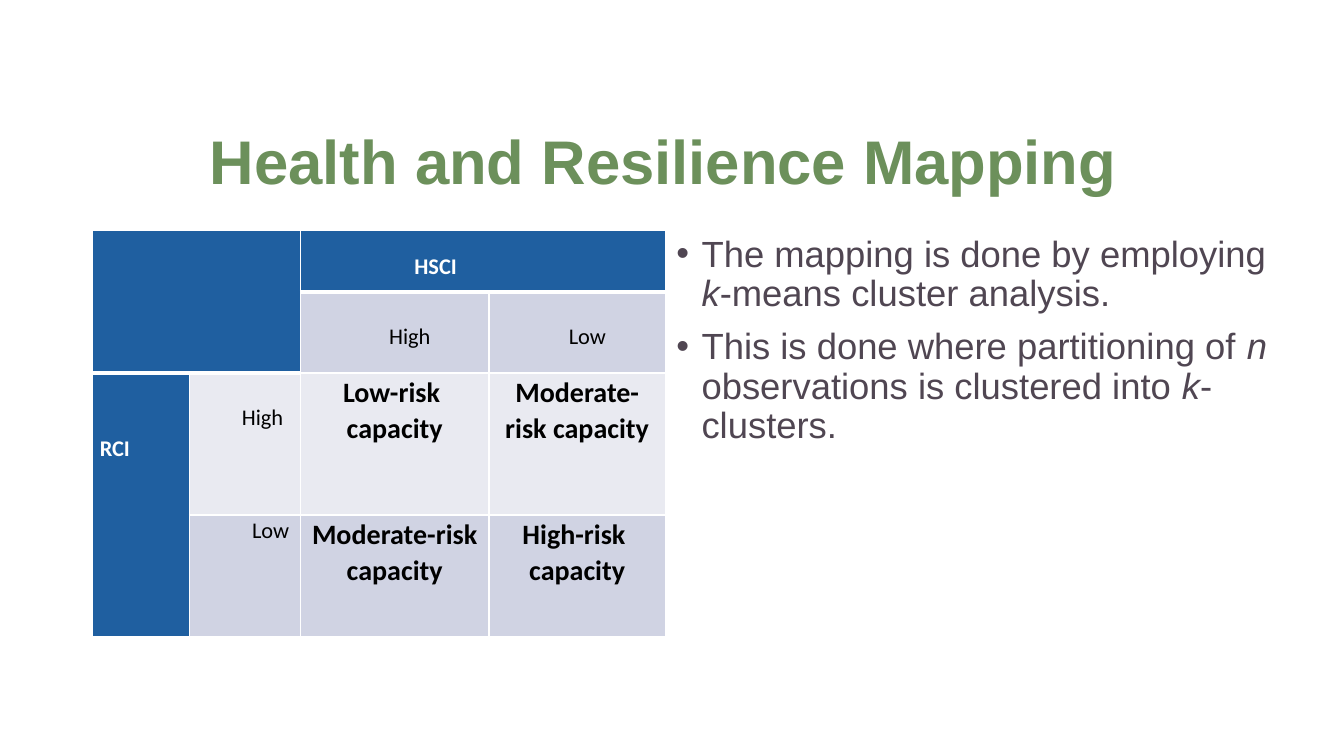
from lxml import etree
from pptx import Presentation
from pptx.dml.color import RGBColor
from pptx.enum.text import MSO_ANCHOR, PP_ALIGN as Align
from pptx.oxml.ns import qn
from pptx.util import Inches, Pt

GREEN = RGBColor(0x6C, 0x90, 0x5B)
PLUM = RGBColor(0x50, 0x46, 0x52)
BLUE = RGBColor(0x1F, 0x5F, 0xA0)
LAVENDER = RGBColor(0xD0, 0xD3, 0xE3)
PALE = RGBColor(0xE9, 0xEA, 0xF1)
WHITE = RGBColor(0xFF, 0xFF, 0xFF)
BLACK = RGBColor(0, 0, 0)

COLUMN_WIDTHS = (0.96, 1.1, 1.87, 1.75)
ROW_HEIGHTS = (0.61, 0.8, 1.41, 1.21)
FILLS = (
    (BLUE, BLUE, BLUE, BLUE),
    (BLUE, BLUE, LAVENDER, LAVENDER),
    (BLUE, PALE, PALE, PALE),
    (BLUE, LAVENDER, LAVENDER, LAVENDER),
)
MERGES = (((0, 0), (1, 1)), ((0, 2), (0, 3)), ((2, 0), (3, 0)))
THICK_EDGES = {(0, 2), (0, 3), (1, 0), (1, 1)}
LABELS = (
    (0, 2, "HSCI", WHITE, True, Align.LEFT, 1.13, 0.2),
    (1, 2, "High", BLACK, False, Align.CENTER, 0.37, 0.29),
    (1, 3, "Low", BLACK, False, Align.CENTER, 0.27, 0.29),
    (2, 0, "RCI", WHITE, True, Align.LEFT, 0.07, 0.6),
    (2, 1, "High", BLACK, False, Align.LEFT, 0.52, 0.29),
    (3, 1, "Low", BLACK, False, Align.LEFT, 0.62, 0),
)
CAPACITIES = (
    (2, 2, ["Low-risk ", "capacity"]),
    (2, 3, ["Moderate-risk capacity"]),
    (3, 2, ["Moderate-risk", "capacity"]),
    (3, 3, ["High-risk ", "capacity"]),
)
POINTS = (
    (("The mapping is done by employing ", False), ("k", True),
     ("-means cluster analysis.", False)),
    (("This is done where partitioning of ", False), ("n", True),
     (" observations is clustered into ", False), ("k", True),
     ("-clusters.", False)),
)


def write(frame, paragraphs, *, font, size, color, bold=False,
          align=Align.LEFT, spacing=1.0, before=0, bullet=False):
    frame.word_wrap = True
    for index, runs in enumerate(paragraphs):
        paragraph = frame.add_paragraph() if index else frame.paragraphs[0]
        paragraph.alignment = align
        paragraph.line_spacing = spacing
        paragraph.space_before = Pt(before if index else 0)
        if bullet:
            properties = paragraph._p.get_or_add_pPr()
            properties.set("marL", str(Inches(0.25)))
            properties.set("indent", str(Inches(-0.25)))
            etree.SubElement(properties, qn("a:buFont"), typeface="Arial")
            etree.SubElement(properties, qn("a:buChar"), char="•")
        for words, italic in [(runs, False)] if isinstance(runs, str) else runs:
            run = paragraph.add_run()
            run.text = words
            run.font.name = font
            run.font.size = Pt(size)
            run.font.color.rgb = color
            run.font.bold = bold
            run.font.italic = italic


def set_borders(cell, top, bottom):
    properties = cell._tc.get_or_add_tcPr()
    sides = (("L", 1), ("R", 1), ("T", top), ("B", bottom))
    for position, (side, width) in enumerate(sides):
        line = etree.Element(qn(f"a:ln{side}"), w=str(Pt(width)))
        fill = etree.SubElement(line, qn("a:solidFill"))
        etree.SubElement(fill, qn("a:srgbClr"), val=str(WHITE))
        properties.insert(position, line)


def add_title(slide, left, top, width, height):
    title = slide.shapes.add_textbox(*map(Inches, (left, top, width, height)))
    title.text_frame.vertical_anchor = MSO_ANCHOR.MIDDLE
    write(title.text_frame, ["Health and Resilience Mapping "], font="Arial",
          size=44, color=GREEN, bold=True, align=Align.CENTER, spacing=0.9)


def add_points(slide, left, top, width, height):
    points = slide.shapes.add_textbox(*map(Inches, (left, top, width, height)))
    write(points.text_frame, POINTS, font="Arial", size=26, color=PLUM,
          spacing=0.9, before=10, bullet=True)


def add_risk_matrix(slide, left, top):
    box = (left, top, sum(COLUMN_WIDTHS), sum(ROW_HEIGHTS))
    matrix = slide.shapes.add_table(4, 4, *map(Inches, box)).table
    matrix.first_row = False
    matrix.horz_banding = False
    for column, width in zip(matrix.columns, COLUMN_WIDTHS):
        column.width = Inches(width)
    for row, height in zip(matrix.rows, ROW_HEIGHTS):
        row.height = Inches(height)
    for r, fills in enumerate(FILLS):
        for c, color in enumerate(fills):
            cell = matrix.cell(r, c)
            cell.fill.solid()
            cell.fill.fore_color.rgb = color
            cell.margin_left = cell.margin_right = Inches(0.07)
            cell.margin_top = cell.margin_bottom = 0
            set_borders(cell, 3 if (r - 1, c) in THICK_EDGES else 1,
                        3 if (r, c) in THICK_EDGES else 1)
    for start, end in MERGES:
        matrix.cell(*start).merge(matrix.cell(*end))
    for r, c, label, color, bold, align, inset, drop in LABELS:
        cell = matrix.cell(r, c)
        cell.margin_left = Inches(inset)
        cell.margin_top = Inches(drop)
        write(cell.text_frame, [label], font="Calibri", size=16, color=color,
              bold=bold, align=align, spacing=1.07)
    for r, c, capacity in CAPACITIES:
        write(matrix.cell(r, c).text_frame, capacity, font="Calibri", size=20,
              color=BLACK, bold=True, align=Align.CENTER, spacing=1.07)


def main():
    deck = Presentation()
    deck.slide_width = Inches(13.33)
    deck.slide_height = Inches(7.5)
    slide = deck.slides.add_slide(deck.slide_layouts[6])
    add_title(slide, 0.92, 0.91, 11.5, 1.45)
    add_points(slide, 6.61, 2.29, 6.17, 4.35)
    add_risk_matrix(slide, 0.92, 2.29)
    deck.save("out.pptx")


if __name__ == "__main__":
    main()
